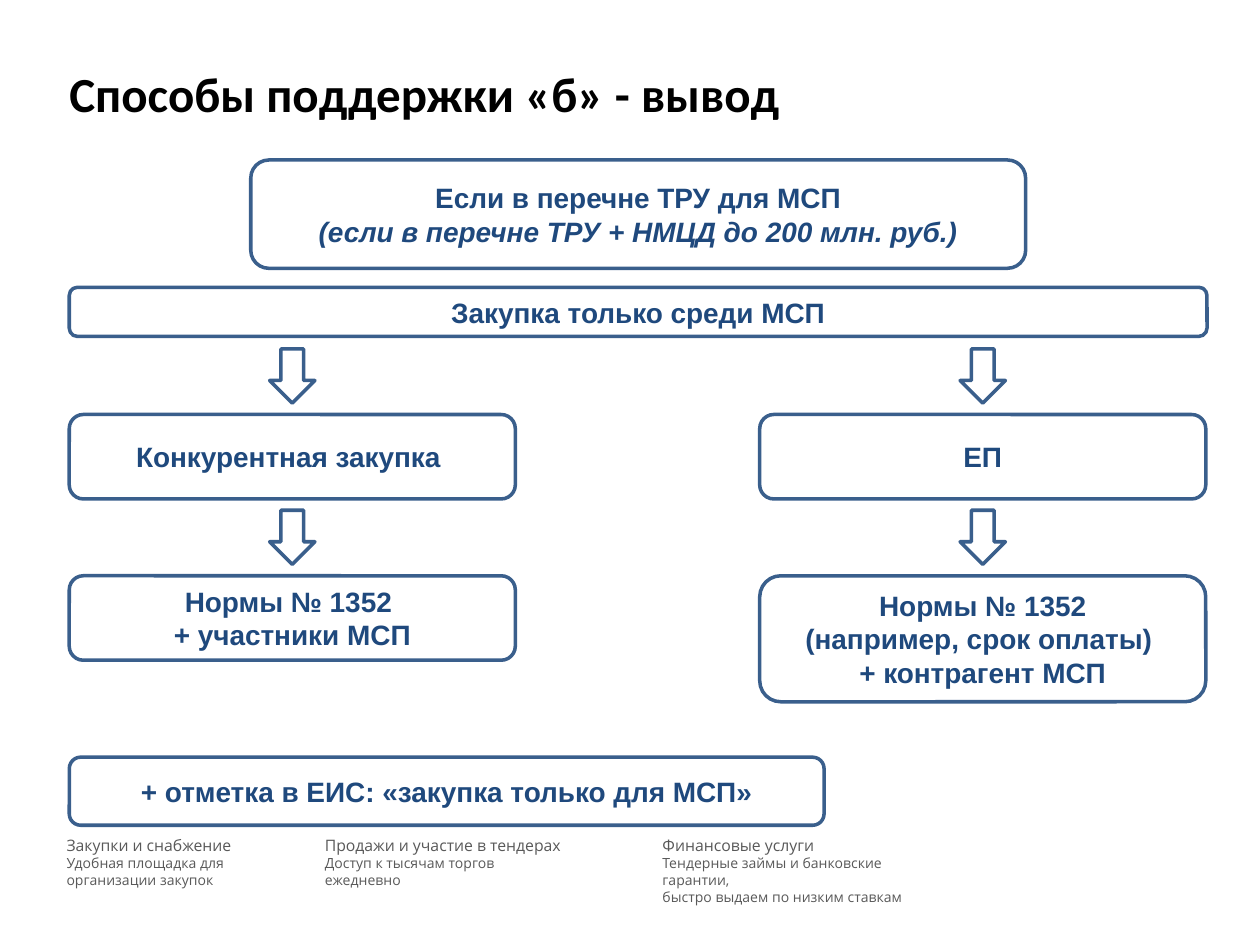
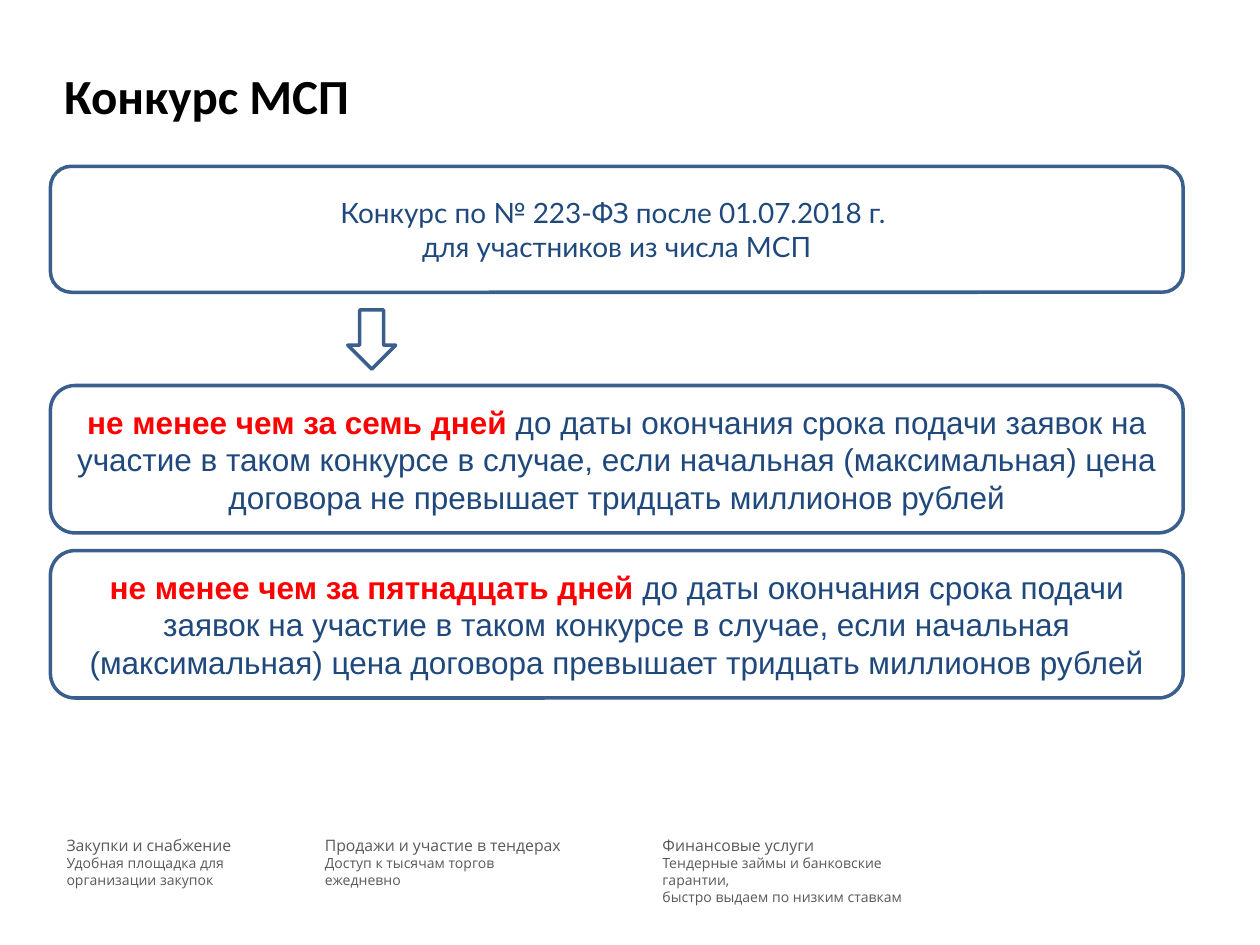
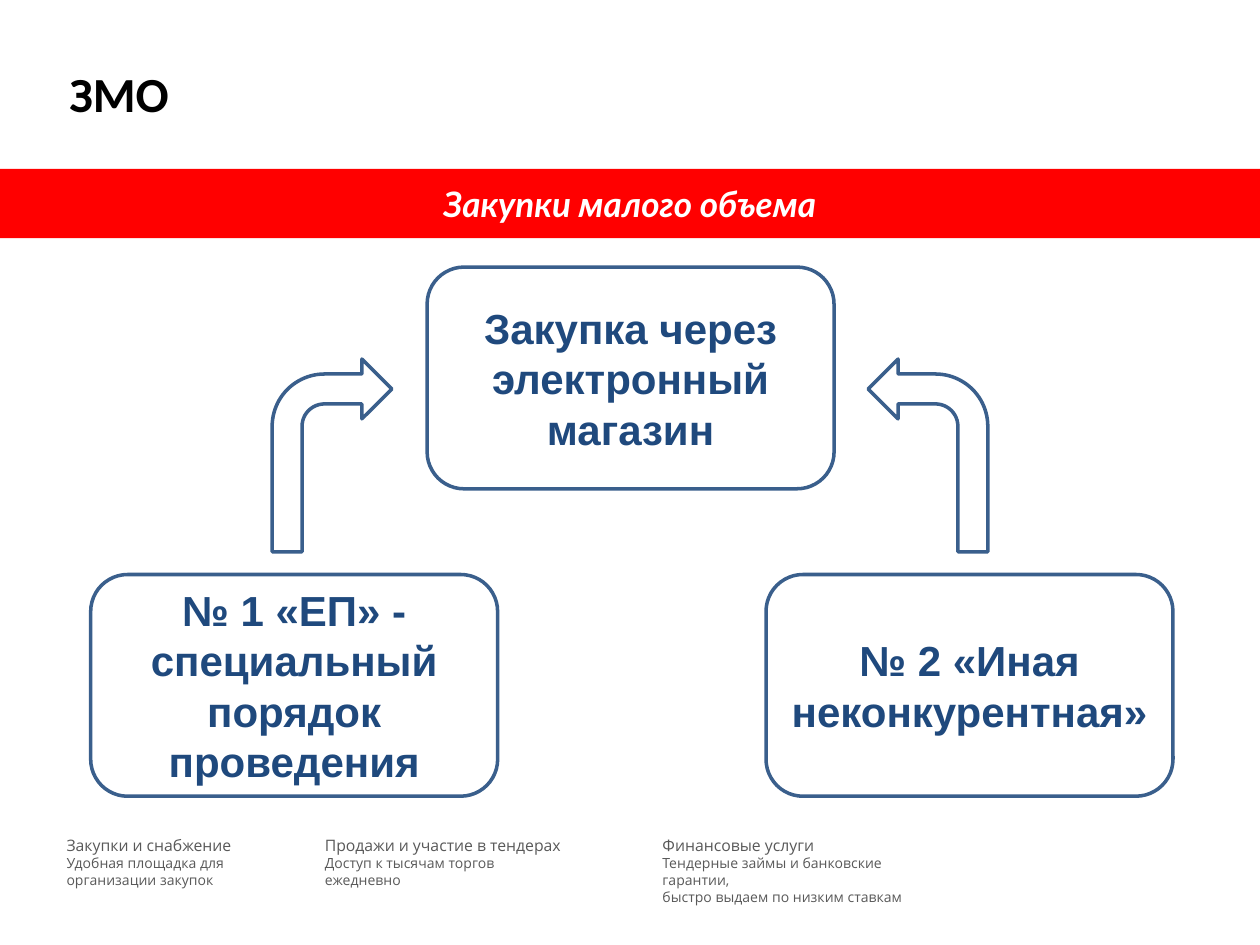
"""Build three slides on procurement from small and medium businesses."""
from dataclasses import dataclass, replace

import pptx
import pptx.dml.color
import pptx.enum.shapes
import pptx.enum.text
import pptx.util

Inches = pptx.util.Inches
Shape = pptx.enum.shapes.MSO_SHAPE
Align = pptx.enum.text.PP_ALIGN
Anchor = pptx.enum.text.MSO_ANCHOR


@dataclass(frozen=True)
class Style:
    font: str
    size: int
    color: str
    bold: bool = False
    italic: bool = False


class Theme:
    outline = "3A5F8C"
    outline_width = 2
    red = "FF0000"
    title = Style("Calibri", 28, "000000", bold=True)
    footer_head = Style("Open Sans", 9, "595959")
    footer_body = replace(footer_head, size=8)
    step = Style("Arial", 16, "1F497D", bold=True)
    condition = replace(step, italic=True)
    heading = Style("Lato", 16, "1F497D")
    term = Style("Arial", 18, "1F497D")
    deadline = replace(term, color=red, bold=True)
    choice = replace(step, size=24)
    banner = Style("Lato", 20, "FFFFFF", bold=True, italic=True)


FOOTERS = [
    ((0.43, 6.51, 1.57, 0.75), "Закупки и снабжение",
     ["Удобная площадка для \nорганизации закупок"]),
    ((2.48, 6.51, 2.13, 0.61), "Продажи и участие в тендерах",
     ["Доступ к тысячам торгов ежедневно"]),
    ((5.16, 6.51, 2.44, 0.75), "Финансовые услуги",
     ["Тендерные займы и банковские гарантии,", "быстро выдаем по низким ставкам"]),
]

SUPPORT_TITLE = "Способы поддержки «б» - вывод"
SUPPORT_BARS = [
    ((1.99, 1.27, 6.15, 0.86),
     [("Если в перечне ТРУ для МСП", Theme.step),
      ("(если в перечне ТРУ + НМЦД до 200 млн. руб.)", Theme.condition)]),
    ((0.55, 2.28, 9.03, 0.39), [("Закупка только среди МСП", Theme.step)]),
    ((0.55, 6.01, 5.99, 0.54),
     [("+ отметка в ЕИС: «закупка только для МСП»", Theme.step)]),
]
SUPPORT_COLUMNS = [
    (0.55, [(0.67, ["Конкурентная закупка "]),
            (0.67, ["Нормы № 1352 \n+ участники МСП"])]),
    (6.03, [(0.67, ["ЕП"]),
            (1, ["Нормы № 1352", "(например, срок оплаты) \n+ контрагент МСП"])]),
]

CONTEST_TITLE = "Конкурс МСП"
CONTEST_HEADING = ("Конкурс по № 223-ФЗ после 01.07.2018 г. \n"
                   "для участников из числа МСП")
CONTEST_TERMS = [
    ("не менее чем за семь дней ",
     "до даты окончания срока подачи заявок на участие в таком конкурсе в случае, "
     "если начальная (максимальная) цена договора не превышает тридцать миллионов рублей"),
    ("не менее чем за пятнадцать дней ",
     "до даты окончания срока подачи заявок на участие в таком конкурсе в случае, "
     "если начальная (максимальная) цена договора превышает тридцать миллионов рублей"),
]

SMALL_TITLE = "ЗМО"
SMALL_BANNER = "Закупки малого объема"
SMALL_CHOICES = [
    (3.39, 2.12, "Закупка через электронный магазин"),
    (0.72, 4.56, "№ 1 «ЕП» - специальный порядок проведения"),
    (6.08, 4.56, "№ 2 «Иная неконкурентная»"),
]


def rgb(color):
    return pptx.dml.color.RGBColor.from_string(color)


def set_font(font, style):
    font.name = style.font
    font.size = pptx.util.Pt(style.size)
    font.bold = style.bold
    font.italic = style.italic
    font.color.rgb = rgb(style.color)


def write(frame, paragraphs, align):
    """Fill a frame; a paragraph is a (text, style) pair or a list of such pairs."""
    frame.word_wrap = True
    for index, content in enumerate(paragraphs):
        para = frame.add_paragraph() if index else frame.paragraphs[0]
        para.alignment = align
        if isinstance(content, list):
            for text, style in content:
                span = para.add_run()
                span.text = text
                set_font(span.font, style)
        else:
            text, style = content
            para.text = text
            set_font(para.font, style)


def add_shape(page, kind, area, paragraphs=(), fill=None):
    shape = page.shapes.add_shape(kind, *map(Inches, area))
    shape.shadow.inherit = False
    if fill:
        shape.fill.solid()
        shape.fill.fore_color.rgb = rgb(fill)
        shape.line.fill.background()
    else:
        shape.fill.background()
        shape.line.color.rgb = rgb(Theme.outline)
        shape.line.width = pptx.util.Pt(Theme.outline_width)
    if paragraphs:
        shape.text_frame.vertical_anchor = Anchor.MIDDLE
        write(shape.text_frame, paragraphs, Align.CENTER)
    return shape


def add_page(deck, title, left=0.55, top=0.4):
    page = deck.slides.add_slide(deck.slide_layouts[5])
    box = page.shapes.title
    box.left, box.top, box.width, box.height = map(Inches, (left, top, 5.64, 0.72))
    frame = box.text_frame
    frame.auto_size = pptx.enum.text.MSO_AUTO_SIZE.NONE
    frame.vertical_anchor = Anchor.MIDDLE
    frame.margin_left = frame.margin_right = frame.margin_top = frame.margin_bottom = 0
    write(frame, [(title, Theme.title)], Align.JUSTIFY)
    frame.paragraphs[0].line_spacing = 0.93
    for area, head, lines in FOOTERS:
        frame = page.shapes.add_textbox(*map(Inches, area)).text_frame
        body = [(line, Theme.footer_body) for line in lines]
        write(frame, [(head, Theme.footer_head)] + body, Align.LEFT)
        frame.paragraphs[0].line_spacing = 1.5
    return page


def build_support(deck):
    page = add_page(deck, SUPPORT_TITLE)
    for area, paragraphs in SUPPORT_BARS:
        add_shape(page, Shape.ROUNDED_RECTANGLE, area, paragraphs)
    first_top, row_step, column_width = 3.29, 1.28, 3.54
    arrow_width, arrow_height, arrow_rise = 0.36, 0.43, 0.52
    for left, steps in SUPPORT_COLUMNS:
        arrow_left = left + (column_width - arrow_width) / 2
        for row, (height, lines) in enumerate(steps):
            top = first_top + row * row_step
            add_shape(page, Shape.DOWN_ARROW,
                      (arrow_left, top - arrow_rise, arrow_width, arrow_height))
            add_shape(page, Shape.ROUNDED_RECTANGLE, (left, top, column_width, height),
                      [(line, Theme.step) for line in lines])


def build_contest(deck):
    page = add_page(deck, CONTEST_TITLE, 0.51, 0.42)
    left, width = 0.4, 8.99
    add_shape(page, Shape.ROUNDED_RECTANGLE, (left, 1.32, width, 1),
              [(CONTEST_HEADING, Theme.heading)])
    add_shape(page, Shape.DOWN_ARROW, (2.76, 2.46, 0.38, 0.47))
    for row, (deadline, rest) in enumerate(CONTEST_TERMS):
        add_shape(page, Shape.ROUNDED_RECTANGLE, (left, 3.06 + row * 1.31, width, 1.17),
                  [[(deadline, Theme.deadline), (rest, Theme.term)]])


def build_small(deck):
    page = add_page(deck, SMALL_TITLE)
    add_shape(page, Shape.RECTANGLE, (0, 1.34, 10, 0.55),
              [(SMALL_BANNER, Theme.banner)], fill=Theme.red)
    for left, top, text in SMALL_CHOICES:
        add_shape(page, Shape.ROUNDED_RECTANGLE, (left, top, 3.23, 1.76),
                  [(text, Theme.choice)])
    for left, flipped in ((2.16, False), (6.89, True)):
        arrow = add_shape(page, Shape.BENT_ARROW, (left, 2.85, 0.95, 1.53))
        if flipped:
            arrow.element.spPr.xfrm.set("flipH", "1")


def main():
    deck = pptx.Presentation()
    deck.slide_width, deck.slide_height = Inches(10), Inches(7.5)
    build_support(deck)
    build_contest(deck)
    build_small(deck)
    deck.save("out.pptx")


if __name__ == "__main__":
    main()
